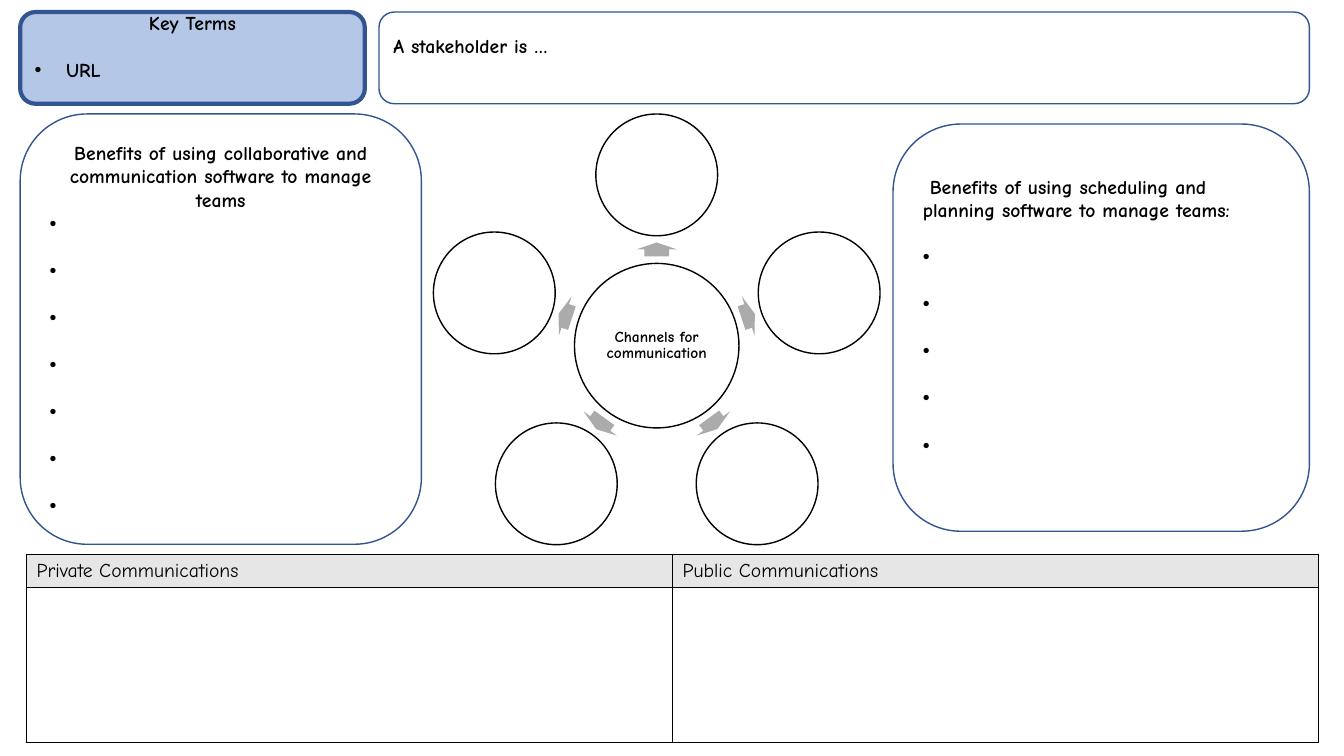
from dataclasses import dataclass
from math import cos, radians, sin

from lxml.etree import SubElement
from pptx import Presentation
from pptx.dml.color import RGBColor
from pptx.enum.shapes import MSO_SHAPE
from pptx.enum.text import MSO_ANCHOR, PP_ALIGN
from pptx.oxml.ns import qn
from pptx.util import Pt


@dataclass(frozen=True)
class Theme:
    font: str = "Comic Neue"
    ink: str = "000000"
    paper: str = "FFFFFF"
    edge: str = "325491"
    terms: str = "B4C7E7"
    arrow: str = "ABABAB"
    head: str = "E7E6E6"
    body: float = 14
    small: float = 11
    gap: float = 16.8
    hang: float = 22.5


def paint(fill, color):
    if color:
        fill.solid()
        fill.fore_color.rgb = RGBColor.from_string(color)
    else:
        fill.background()


def write(para, text, theme, size=None, bold=True, align=PP_ALIGN.LEFT,
          after=0, line=None, bullet=False, indent=0):
    para.alignment = align
    para.space_after = Pt(after)
    if line:
        para.line_spacing = line
    props = para._p.get_or_add_pPr()
    if bullet:
        props.set("marL", str(Pt(theme.hang)))
        props.set("indent", str(-Pt(theme.hang)))
        SubElement(props, qn("a:buFont"), typeface="Arial")
        SubElement(props, qn("a:buChar"), char="•")
    elif indent:
        props.set("indent", str(Pt(indent)))
    run = para.add_run()
    run.text = text
    font = run.font
    font.name, font.size, font.bold = theme.font, Pt(size or theme.body), bold
    font.color.rgb = RGBColor.from_string(theme.ink)


class Sheet:
    def __init__(self, deck, theme):
        self.theme = theme
        self.slide = deck.slides.add_slide(deck.slide_layouts[6])

    def shape(self, kind, left, top, width, height, fill=None, edge=None, weight=1):
        item = self.slide.shapes.add_shape(kind, Pt(left), Pt(top), Pt(width), Pt(height))
        item.shadow.inherit = False
        paint(item.fill, fill)
        paint(item.line.fill, edge)
        if edge:
            item.line.width = Pt(weight)
        return item

    def text(self, item, lines, foot=3.6, pad=None):
        """Fill a shape with (text, format) lines; foot is the bottom inset."""
        frame = item.text_frame
        frame.word_wrap = True
        frame.vertical_anchor = MSO_ANCHOR.MIDDLE
        frame.margin_bottom = Pt(foot)
        if pad is not None:
            frame.margin_left = frame.margin_right = Pt(pad)
            frame.margin_top = frame.margin_bottom = Pt(pad)
        for i, (words, style) in enumerate(lines):
            para = frame.add_paragraph() if i else frame.paragraphs[0]
            write(para, words, self.theme, **style)

    def panel(self, box, lines, foot=3.6, fill=None, weight=1):
        item = self.shape(MSO_SHAPE.ROUNDED_RECTANGLE, *box, fill, self.theme.edge, weight)
        self.text(item, lines, foot)

    def disc(self, x, y, size):
        return self.shape(MSO_SHAPE.OVAL, x - size / 2, y - size / 2, size, size,
                          self.theme.paper, self.theme.ink)

    def arrow(self, x, y, width, height, turn):
        item = self.shape(MSO_SHAPE.RIGHT_ARROW, x - width / 2, y - height / 2,
                          width, height, self.theme.arrow)
        item.adjustments[0] = 0.6
        item.adjustments[1] = 0.5
        item.rotation = turn

    def wheel(self, x, y, label, count=5):
        """Draw a hub with empty circles spaced evenly around it."""
        hub = self.disc(x, y, 117.5)
        self.text(hub, [(label, dict(size=self.theme.small, align=PP_ALIGN.CENTER,
                                     line=0.9))], pad=1.4)
        for i in range(count):
            turn = (270 + i * 360 / count) % 360
            dx, dy = cos(radians(turn)), sin(radians(turn))
            self.arrow(x + 68.7 * dx, y + 68.7 * dy, 10, 29.5, turn)
            self.disc(x + 122 * dx, y + 122 * dy, 87)

    def border(self, cell):
        props = cell._tc.get_or_add_tcPr()
        for i, side in enumerate(("a:lnL", "a:lnR", "a:lnT", "a:lnB")):
            line = props.makeelement(qn(side), {"w": str(Pt(1))})
            fill = SubElement(line, qn("a:solidFill"))
            SubElement(fill, qn("a:srgbClr"), val=self.theme.ink)
            props.insert(i, line)

    def table(self, left, top, width, heads, rows):
        grid = self.slide.shapes.add_table(len(rows), len(heads), Pt(left), Pt(top),
                                           Pt(width), Pt(sum(rows))).table
        grid.first_row = grid.horz_banding = False
        for col in grid.columns:
            col.width = Pt(width / len(heads))
        for i, height in enumerate(rows):
            grid.rows[i].height = Pt(height)
            for j, head in enumerate(heads):
                cell = grid.cell(i, j)
                paint(cell.fill, None if i else self.theme.head)
                self.border(cell)
                if i == 0:
                    write(cell.text_frame.paragraphs[0], head, self.theme, bold=False)


def points(count, gap):
    """Empty bullets for pupils to complete, with a gap between them."""
    return [(" ", dict(bullet=True, after=gap if i < count - 1 else 0))
            for i in range(count)]


def main():
    deck = Presentation()
    deck.slide_width, deck.slide_height = Pt(960), Pt(540)
    theme = Theme()
    sheet = Sheet(deck, theme)
    gap, mid = theme.gap, PP_ALIGN.CENTER
    low = 3.6 + gap

    sheet.panel((14.4, 81.4, 286.6, 307.4), [
        ("Benefits of using collaborative and communication software to manage teams",
         dict(align=mid)), *points(7, gap)])
    sheet.panel((14.4, 8.6, 246.2, 65.5), [
        ("Key Terms", dict(align=mid, after=gap)),
        ("URL", dict(bullet=True))], foot=low, fill=theme.terms, weight=3)
    sheet.panel((270.7, 8.6, 664.6, 65.5), [("A stakeholder is …", {})], foot=low)
    sheet.wheel(469.1, 246.9, "Channels for communication")
    sheet.panel((637.9, 88.6, 297.4, 290.9), [
        ("Benefits of using scheduling and planning software to manage teams:",
         dict(indent=5, after=gap)), *points(5, gap)], foot=low)
    sheet.table(18.9, 396, 923, ["Private Communications", "Public Communications"],
                [23.6, 111])
    deck.save("out.pptx")


if __name__ == "__main__":
    main()
